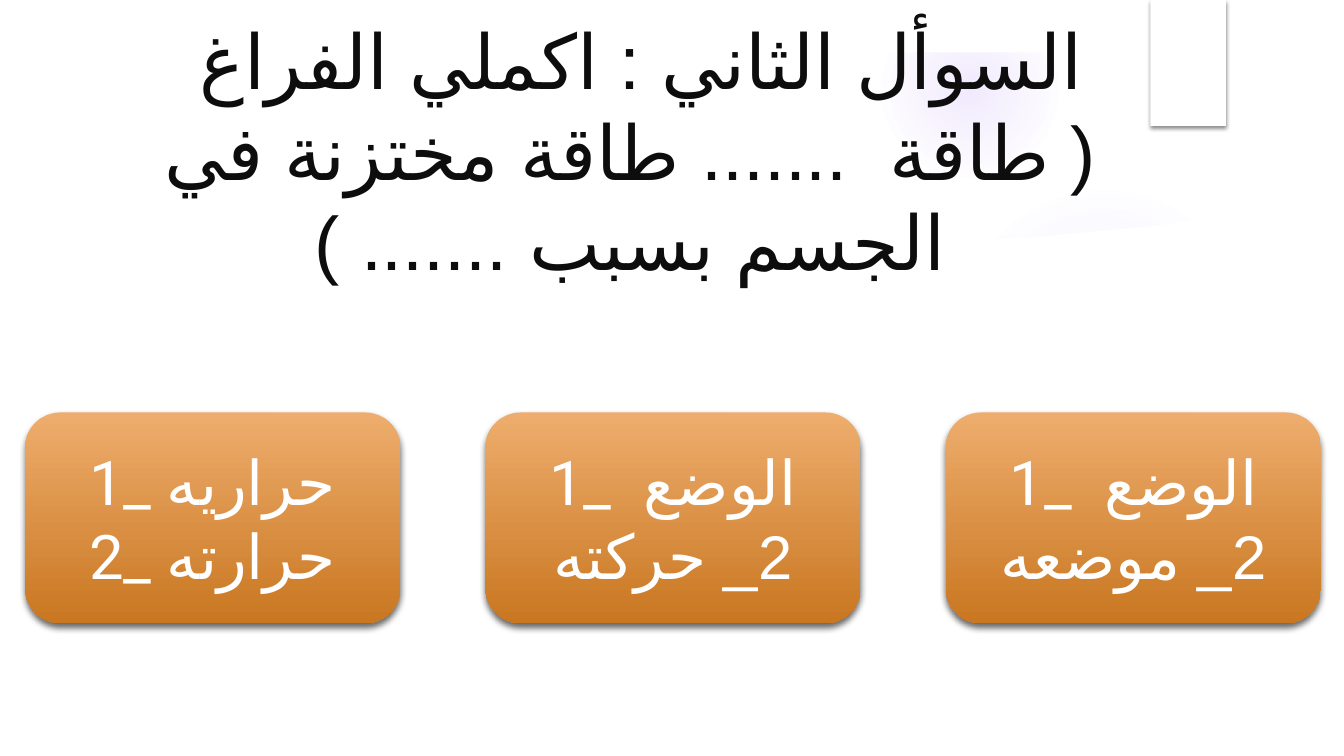
import pptx
import pptx.util
import pptx.dml.color
import pptx.enum.lang
import pptx.enum.shapes
import pptx.enum.text
import pptx.oxml
import pptx.oxml.ns
from dataclasses import dataclass

# The slide is a grid of 160 columns by 90 rows
COLUMNS, ROWS = 160, 90
UNIT = pptx.util.Inches(7.5) // ROWS


@dataclass(frozen=True)
class Theme:
    paper: str = "FFFFFF"
    glow: str = "9B6BF2"
    ink: str = "0D0D0D"
    button_top: str = "EEAD6D"
    button_bottom: str = "C97721"
    shadow: str = "000000"
    title_font: str = "Arial"
    button_font: str = "Roboto"
    arabic_font: str = "Arial"
    title_size: int = 54
    button_size: int = 44


THEME = Theme()


def grid(*cells):
    return [round(cell * UNIT) for cell in cells]


def color_xml(color, opacity):
    return (f'<a:srgbClr val="{color}"><a:alpha val="{opacity * 1000}"/>'
            '</a:srgbClr>')


def plain(shape, color=THEME.paper):
    """Solid fill, no outline, no shadow."""
    shape.fill.solid()
    shape.fill.fore_color.rgb = pptx.dml.color.RGBColor.from_string(color)
    shape.line.fill.background()
    shape.shadow.inherit = False
    return shape


def add_preset(slide, kind, place):
    return plain(slide.shapes.add_shape(kind, *grid(*place)))


def add_outline(slide, *contours):
    first, *others = contours
    builder = slide.shapes.build_freeform(*grid(*first[0]), scale=1.0)
    builder.add_line_segments([grid(*point) for point in first[1:]])
    for contour in others:
        builder.move_to(*grid(*contour[0]))
        builder.add_line_segments([grid(*point) for point in contour[1:]])
    return plain(builder.convert_to_shape())


def set_gradient(shape, stops, direction):
    """Stops are (position, colour, opacity), all in percent."""
    marks = "".join(f'<a:gs pos="{position * 1000}">{color_xml(color, opacity)}</a:gs>'
                    for position, color, opacity in stops)
    gradient = pptx.oxml.parse_xml(
        f'<a:gradFill {pptx.oxml.ns.nsdecls("a")} rotWithShape="1">'
        f'<a:gsLst>{marks}</a:gsLst>{direction}</a:gradFill>')
    properties = shape.element.spPr
    properties.replace(properties.find(pptx.oxml.ns.qn("a:solidFill")), gradient)


def set_shadow(shape, opacity, blur, distance):
    effects = shape.element.spPr.find(pptx.oxml.ns.qn("a:effectLst"))
    effects.append(pptx.oxml.parse_xml(
        f'<a:outerShdw {pptx.oxml.ns.nsdecls("a")} blurRad="{pptx.util.Pt(blur)}" '
        f'dist="{pptx.util.Pt(distance)}" dir="5400000" rotWithShape="0">'
        f'{color_xml(THEME.shadow, opacity)}</a:outerShdw>'))


def write_text(box, paragraphs, *, font, size, color, rtl=False):
    """Each paragraph is a list of lines."""
    frame = box.text_frame
    frame.word_wrap = True
    frame.vertical_anchor = pptx.enum.text.MSO_ANCHOR.MIDDLE
    for index, lines in enumerate(paragraphs):
        para = frame.add_paragraph() if index else frame.paragraphs[0]
        para.alignment = pptx.enum.text.PP_ALIGN.CENTER
        para._p.get_or_add_pPr().set("rtl", str(int(rtl)))
        for number, line in enumerate(lines):
            if number:
                para.add_line_break()
            span = para.add_run()
            span.text = line
            span.font.name = font
            span.font.size = pptx.util.Pt(size)
            span.font.language_id = pptx.enum.lang.MSO_LANGUAGE_ID.ARABIC
            span.font.color.rgb = pptx.dml.color.RGBColor.from_string(color)
            span._r.get_or_add_rPr().append(pptx.oxml.parse_xml(
                f'<a:cs {pptx.oxml.ns.nsdecls("a")} typeface="{THEME.arabic_font}"/>'))


def add_glow(slide, place, levels):
    circle = add_preset(slide, pptx.enum.shapes.MSO_SHAPE.OVAL, place)
    set_gradient(circle, [(position, THEME.glow, opacity) for position, opacity in levels],
                 '<a:path path="circle"><a:fillToRect l="50000" t="50000" '
                 'r="50000" b="50000"/></a:path>')


def add_button(slide, place, paragraphs):
    button = add_preset(slide, pptx.enum.shapes.MSO_SHAPE.ROUNDED_RECTANGLE, place)
    set_gradient(button, [(0, THEME.button_top, 100), (100, THEME.button_bottom, 100)],
                 '<a:lin ang="5400000" scaled="0"/>')
    set_shadow(button, opacity=60, blur=5, distance=3)
    write_text(button, paragraphs, font=THEME.button_font,
               size=THEME.button_size, color=THEME.paper)


def add_backdrop(slide):
    # Soft glows
    add_glow(slide, (113, 22, 37, 37), [(0, 7), (36, 6), (69, 0)])
    add_glow(slide, (105, 0.1, 21, 21), [(0, 14), (36, 7), (73, 0)])
    # Translucent ribbon
    ribbon = add_outline(slide, [
        (112.1, 30), (138, 28.2), (154.7, 25.7), (154, 19.9),
        (145.6, 22.6), (137.3, 24.7), (126.4, 27), (111.6, 29.2)])
    set_gradient(ribbon, [(0, THEME.paper, 20), (100, THEME.paper, 20)],
                 '<a:lin ang="0" scaled="0"/>')
    # Panel with a sagging top edge
    add_outline(slide, [
        (6, 84), (6, 24.5), (11.3, 25.2), (22.4, 26.5), (34, 27.6), (48.1, 28.6),
        (61.3, 29.3), (78.8, 29.8), (94.3, 29.6), (110.5, 29), (123.8, 28.2),
        (137.3, 26.9), (147.4, 25.6), (154, 24.5), (154, 84)])
    # Frame around the slide
    edge = 6.24
    right, bottom = COLUMNS - edge, ROWS - edge
    add_outline(slide,
                [(0, 0), (0, ROWS), (COLUMNS, ROWS), (COLUMNS, 0), (0, 0)],
                [(right, bottom), (edge, bottom), (edge, edge), (right, edge),
                 (right, bottom)])
    # Page tab
    tab = add_preset(slide, pptx.enum.shapes.MSO_SHAPE.RECTANGLE, (136.95, 0, 9, 15))
    set_shadow(tab, opacity=45, blur=3, distance=2)


def main():
    deck = pptx.Presentation()
    deck.slide_width, deck.slide_height = grid(COLUMNS, ROWS)
    page = deck.slides.add_slide(deck.slide_layouts[6])
    add_backdrop(page)

    # Question
    question = page.shapes.add_textbox(*grid(15.1, 7.4, 119.9, 20.9))
    write_text(question,
               [["السوأل الثاني : اكملي الفراغ  ( طاقة  ....... طاقة مختزنة في الجسم بسبب ....... )"]],
               font=THEME.title_font, size=THEME.title_size, color=THEME.ink, rtl=True)

    # Answers
    answers = [
        [["1_ حراريه"], ["2_ حرارته"]],
        [["1_ الوضع ", "2_ حركته"]],
        [["1_ الوضع ", "2_ موضعه"]],
    ]
    for column, answer in enumerate(answers):
        add_button(page, (3 + column * 54.8, 49.1, 44.65, 25.1), answer)

    deck.save("out.pptx")


if __name__ == "__main__":
    main()
